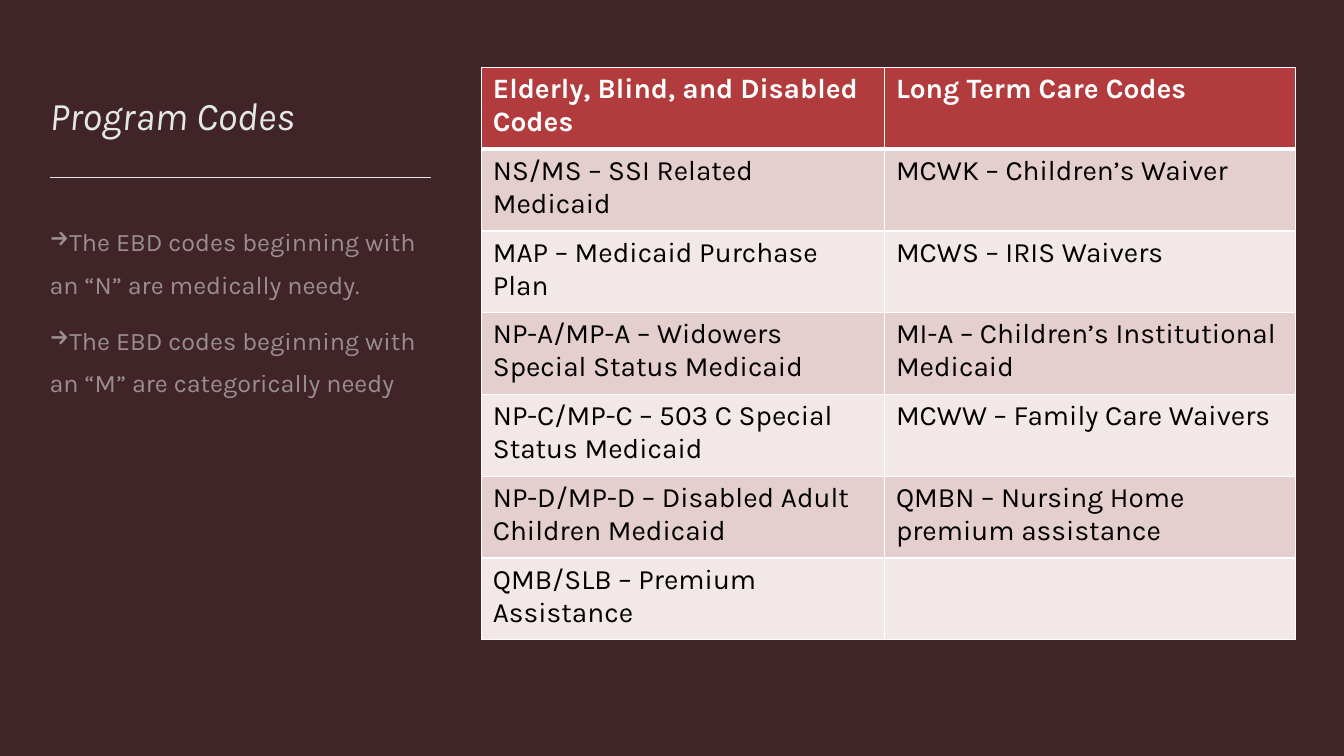
"""Builds the Program Codes slide with two notes and a table of Medicaid codes."""
from lxml.etree import SubElement
from pptx import Presentation
from pptx.dml.color import RGBColor
from pptx.enum.shapes import MSO_CONNECTOR as Connector
from pptx.enum.text import MSO_ANCHOR as Anchor
from pptx.oxml.ns import qn
from pptx.util import Cm, Pt

PALE, WHITE, BLACK = "E2E8E8", "FFFFFF", "000000"
HEADER_FILL, BANDS = "B13B3D", ["F2E8E8", "E4CECE"]
LEFT, COLUMN_WIDTH = Cm(1.25), Cm(9.6)

NOTES = [
    "The EBD codes beginning with an “N” are medically needy.",
    "The EBD codes beginning with an “M” are categorically needy",
]
CODES = [
    ("Elderly, Blind, and Disabled Codes", "Long Term Care Codes"),
    ("NS/MS – SSI Related Medicaid", "MCWK – Children’s Waiver"),
    ("MAP – Medicaid Purchase Plan", "MCWS – IRIS Waivers"),
    ("NP-A/MP-A – Widowers Special Status Medicaid", "MI-A – Children’s Institutional Medicaid"),
    ("NP-C/MP-C – 503 C Special Status Medicaid", "MCWW – Family Care Waivers"),
    ("NP-D/MP-D – Disabled Adult Children Medicaid", "QMBN – Nursing Home premium assistance"),
    ("QMB/SLB – Premium Assistance", ""),
]


def paint(color_format, value):
    color_format.rgb = RGBColor.from_string(value)


def write(para, text, size, color):
    para.text = text
    for span in para.runs:
        span.font.name = "Karla"
        span.font.size = Pt(size)
        paint(span.font.color, color) if span.font.fill.solid() is None else None
    return para


deck = Presentation()
deck.slide_width, deck.slide_height = Cm(33.87), Cm(19.05)
page = deck.slides.add_slide(deck.slide_layouts[6])
page.background.fill.solid()
paint(page.background.fill.fore_color, "412428")

title_box = page.shapes.add_textbox(LEFT, Cm(1.09), COLUMN_WIDTH, Cm(2.39))
notes_box = page.shapes.add_textbox(LEFT, Cm(5.41), COLUMN_WIDTH, Cm(11.13))
for box in (title_box, notes_box):
    frame = box.text_frame
    frame.word_wrap = True
    frame.margin_left = frame.margin_top = frame.margin_right = frame.margin_bottom = 0

title_box.text_frame.vertical_anchor = Anchor.BOTTOM
title = write(title_box.text_frame.paragraphs[0], "Program Codes", 28, PALE)
title.runs[0].font.italic = True

rule = page.shapes.add_connector(Connector.STRAIGHT, LEFT, Cm(4.47), LEFT + COLUMN_WIDTH, Cm(4.47))
rule.line.width = Pt(0.5)
paint(rule.line.color, PALE)
SubElement(rule.element.spPr, qn("a:effectLst"))

notes_frame = notes_box.text_frame
notes_frame.margin_right = Cm(0.25)
for index, note in enumerate(NOTES):
    para = notes_frame.add_paragraph() if index else notes_frame.paragraphs[0]
    write(para, note, 18, PALE)
    para.line_spacing = 1.4
    para.space_before = Pt(10)
    properties = para.runs[0].font.fill.fore_color and para.runs[0].font
    for color in para.runs[0].font._element.iter(qn("a:srgbClr")):
        SubElement(color, qn("a:alpha"), val="55000")
    layout = para._p.get_or_add_pPr()
    layout.set("marL", "0")
    layout.set("indent", "0")
    SubElement(layout, qn("a:buChar"), char="→")

table_frame = page.shapes.add_table(len(CODES), 2, Cm(12.14), Cm(1.7), Cm(20.5), Cm(14.4))
table = table_frame.table
table.columns[0].width, table.columns[1].width = Cm(10.16), Cm(10.34)
for row_index, texts in enumerate(CODES):
    is_header = row_index == 0
    table.rows[row_index].height = Cm(2.06)
    for column_index, text in enumerate(texts):
        cell = table.cell(row_index, column_index)
        cell.margin_left = cell.margin_right = Cm(0.28)
        cell.margin_top = cell.margin_bottom = Cm(0.14)
        para = write(cell.text_frame.paragraphs[0], text, 20, WHITE if is_header else BLACK)
        para.font.size = Pt(20)
        for span in para.runs:
            span.font.bold = is_header
        borders = {"L": 1, "R": 1, "T": 3 if row_index == 1 else 1, "B": 3 if is_header else 1}
        for side, points in borders.items():
            border = SubElement(cell._tc.get_or_add_tcPr(), qn(f"a:ln{side}"), w=str(Pt(points)))
            SubElement(SubElement(border, qn("a:solidFill")), qn("a:srgbClr"), val=WHITE)
        cell.fill.solid()
        paint(cell.fill.fore_color, HEADER_FILL if is_header else BANDS[row_index % 2])

deck.save("out.pptx")
